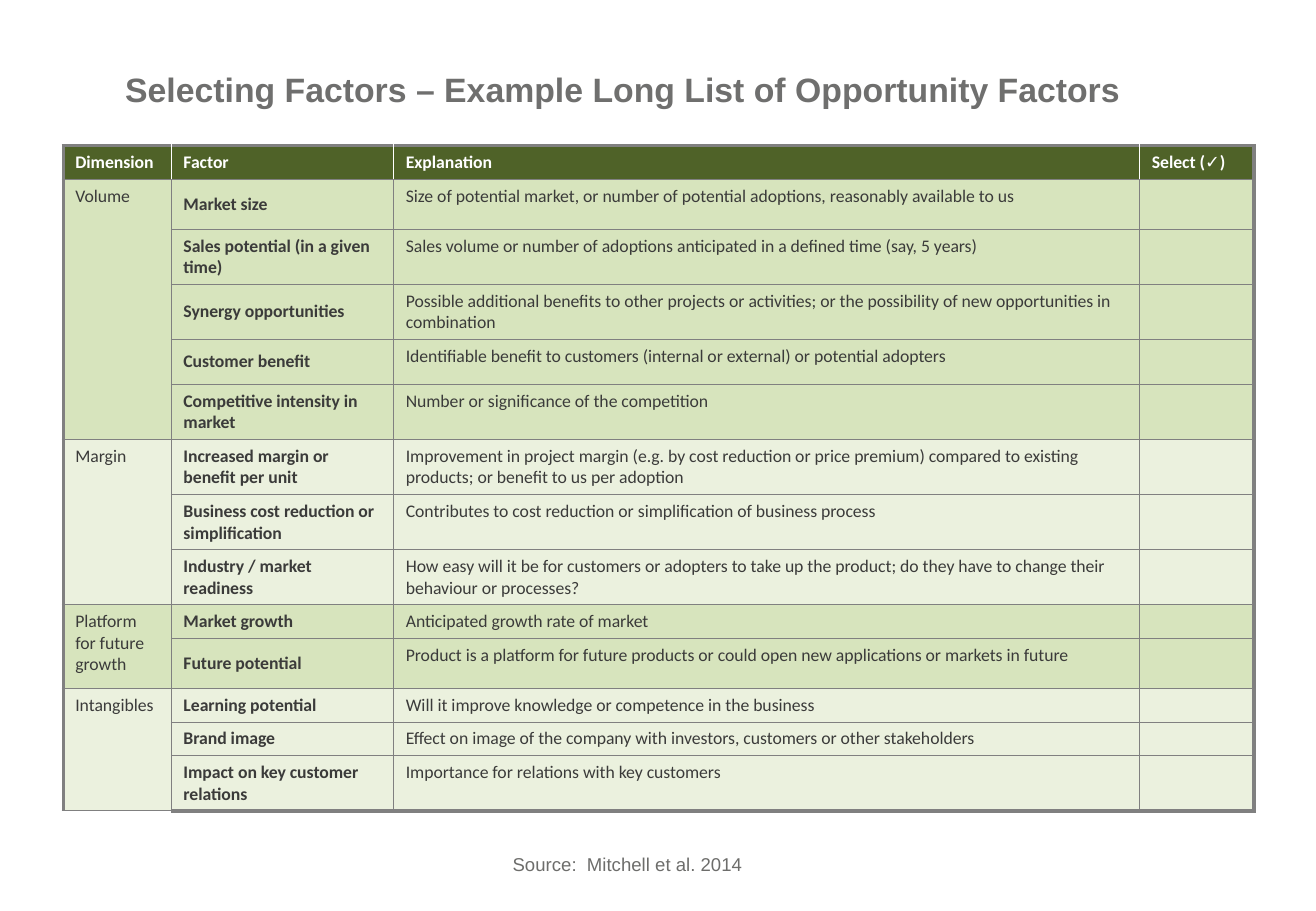
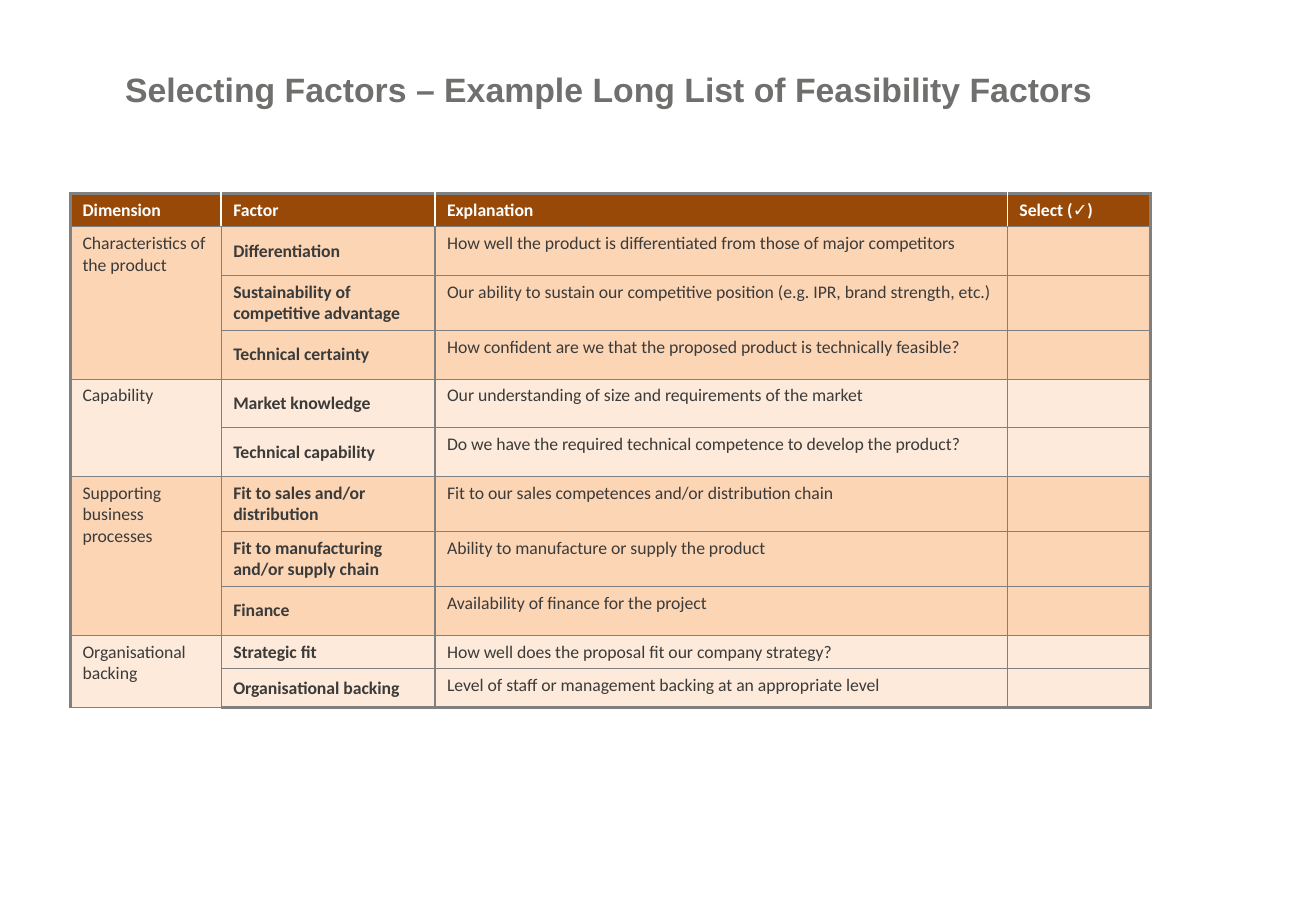
from dataclasses import dataclass

import lxml.etree
import pptx
import pptx.dml.color
import pptx.enum.text
import pptx.oxml.ns
import pptx.util

Inches = pptx.util.Inches
Pt = pptx.util.Pt
qn = pptx.oxml.ns.qn
MIDDLE = pptx.enum.text.MSO_ANCHOR.MIDDLE
TOP = pptx.enum.text.MSO_ANCHOR.TOP


@dataclass(frozen=True)
class Theme:
    title_font: str = "Arial"
    table_font: str = "Calibri"
    title_size: float = 20
    table_size: float = 10.5
    source_size: float = 11
    title_color: str = "6F6F6E"
    source_color: str = "6D6D6B"
    text_color: str = "3B3B3A"
    header_text: str = "FFFFFF"
    grid: str = "808080"
    frame_width: float = 2.25
    grid_width: float = 0.75
    header_width: float = 1


@dataclass(frozen=True)
class Palette:
    header: str
    bands: tuple


THEME = Theme()
GREEN = Palette("4F6228", ("D7E4BD", "EBF1DE"))
ORANGE = Palette("984807", ("FCD5B5", "FDEADA"))

SLIDE_SIZE = (10.83, 7.5)
TITLE_BOX = (0.93, 0.5, 9.17, 0.5)
HEADINGS = ("Dimension", "Factor", "Explanation", "Select (✓)")

OPPORTUNITY = [
    ("Volume", [
        ("Market size", "Size of potential market, or number of potential adoptions, reasonably available to us", 0.41),
        ("Sales potential (in a given time)",
         "Sales volume or number of adoptions anticipated in a defined time (say, 5 years)", 0.37),
        ("Synergy opportunities",
         "Possible additional benefits to other projects or activities; or the possibility of new "
         "opportunities in combination", 0.41),
        ("Customer benefit",
         "Identifiable benefit to customers (internal or external) or potential adopters", 0.37),
        ("Competitive intensity in market", "Number or significance of the competition", 0.25),
    ]),
    ("Margin", [
        ("Increased margin or benefit per unit",
         "Improvement in project margin (e.g. by cost reduction or price premium) compared to existing "
         "products; or benefit to us per adoption", 0.41),
        ("Business cost reduction or simplification",
         "Contributes to cost reduction or simplification of business process", 0.41),
        ("Industry / market readiness",
         "How easy will it be for customers or adopters to take up the product; do they have to change "
         "their behaviour or processes?", 0.41),
    ]),
    ("Platform for future growth", [
        ("Market growth", "Anticipated growth rate of market", 0.25),
        ("Future potential",
         "Product is a platform for future products or could open new applications or markets in future", 0.41),
    ]),
    ("Intangibles", [
        ("Learning potential", "Will it improve knowledge or competence in the business", 0.25),
        ("Brand image", "Effect on image of the company with investors, customers or other stakeholders", 0.25),
        ("Impact on key customer relations", "Importance for relations with key customers", 0.41),
    ]),
]

FEASIBILITY = [
    ("Characteristics of the product", [
        ("Differentiation", "How well the product is differentiated from those of major competitors", 0.4),
        ("Sustainability of competitive advantage",
         "Our ability to sustain our competitive position (e.g. IPR, brand strength, etc.)", 0.4),
        ("Technical certainty", "How confident are we that the proposed product is technically feasible?", 0.4),
    ]),
    ("Capability", [
        ("Market knowledge", "Our understanding of size and requirements of the market", 0.4),
        ("Technical capability", "Do we have the required technical competence to develop the product?", 0.4),
    ]),
    ("Supporting business processes", [
        ("Fit to sales and/or distribution", "Fit to our sales competences and/or distribution chain", 0.24),
        ("Fit to manufacturing and/or supply chain", "Ability to manufacture or supply the product", 0.4),
        ("Finance", "Availability of finance for the project", 0.4),
    ]),
    ("Organisational backing", [
        ("Strategic fit", "How well does the proposal fit our company strategy?", 0.24),
        ("Organisational backing", "Level of staff or management backing at an appropriate level", 0.32),
    ]),
]


def rgb(color):
    return pptx.dml.color.RGBColor.from_string(color)


def set_font(paragraph, name, size, color, bold=False):
    font = paragraph.font
    font.name, font.size, font.bold = name, Pt(size), bold
    font.color.rgb = rgb(color)


def place_title(slide, box, text):
    title = slide.shapes.title
    title.left, title.top, title.width, title.height = map(Inches, box)
    frame = title.text_frame
    frame.text = text
    frame.vertical_anchor = MIDDLE
    frame.auto_size = pptx.enum.text.MSO_AUTO_SIZE.NONE
    heading = frame.paragraphs[0]
    heading.alignment = pptx.enum.text.PP_ALIGN.LEFT
    heading.line_spacing = 0.9
    set_font(heading, THEME.title_font, THEME.title_size, THEME.title_color, True)


def place_source(slide, box, text):
    frame = slide.shapes.add_textbox(*map(Inches, box)).text_frame
    frame.word_wrap = True
    frame.text = text
    set_font(frame.paragraphs[0], THEME.title_font, THEME.source_size, THEME.source_color)


def set_borders(cell, row, column, last_row, last_column):
    frame = (THEME.grid, THEME.frame_width)
    inner = (THEME.grid, THEME.grid_width)
    divider = (THEME.header_text, THEME.header_width) if row == 0 else inner
    edges = {
        "a:lnL": frame if column == 0 else divider,
        "a:lnR": frame if column == last_column else divider,
        "a:lnT": frame if row == 0 else inner,
        "a:lnB": frame if row == last_row else inner,
    }
    properties = cell._tc.get_or_add_tcPr()
    for tag, (color, width) in edges.items():
        line = lxml.etree.SubElement(properties, qn(tag), w=str(Pt(width)))
        fill = lxml.etree.SubElement(line, qn("a:solidFill"))
        lxml.etree.SubElement(fill, qn("a:srgbClr"), val=color)


def fill_cell(cell, text, fill, color, bold, anchor):
    cell.text = text
    cell.vertical_anchor = anchor
    cell.fill.solid()
    cell.fill.fore_color.rgb = rgb(fill)
    set_font(cell.text_frame.paragraphs[0], THEME.table_font, THEME.table_size, color, bold)


def place_factors(slide, left, top, widths, header_height, palette, groups):
    rows = [(HEADINGS, header_height, palette.header)]
    spans = []
    for index, (dimension, factors) in enumerate(groups):
        spans.append((len(rows), len(rows) + len(factors) - 1))
        band = palette.bands[index % len(palette.bands)]
        for position, (factor, explanation, height) in enumerate(factors):
            label = dimension if position == 0 else ""
            rows.append(((label, factor, explanation, ""), height, band))

    total_height = sum(height for _, height, _ in rows)
    table = slide.shapes.add_table(
        len(rows), len(widths), Inches(left), Inches(top), Inches(sum(widths)), Inches(total_height)
    ).table
    table.horz_banding = False
    for column, width in zip(table.columns, widths):
        column.width = Inches(width)

    for r, (texts, height, fill) in enumerate(rows):
        table.rows[r].height = Inches(height)
        header = r == 0
        for c, text in enumerate(texts):
            cell = table.cell(r, c)
            is_factor = c == 1 and not header
            set_borders(cell, r, c, len(rows) - 1, len(widths) - 1)
            fill_cell(cell, text, fill, THEME.header_text if header else THEME.text_color,
                      header or is_factor, MIDDLE if is_factor else TOP)

    for first, last in spans:
        table.cell(first, 0).merge(table.cell(last, 0))


def add_factor_slide(deck, title, *table_parts):
    slide = deck.slides.add_slide(deck.slide_layouts.get_by_name("Title Only"))
    place_title(slide, TITLE_BOX, title)
    place_factors(slide, *table_parts)
    return slide


def main():
    deck = pptx.Presentation()
    deck.slide_width, deck.slide_height = map(Inches, SLIDE_SIZE)
    opportunity = add_factor_slide(
        deck, "Selecting Factors – Example Long List of Opportunity Factors",
        0.52, 1.2, (0.89, 1.83, 6.14, 0.94), 0.25, GREEN, OPPORTUNITY)
    place_source(opportunity, (4.12, 6.97, 2.18, 0.29), "Source:  Mitchell et al. 2014")
    add_factor_slide(
        deck, "Selecting Factors – Example Long List of Feasibility Factors",
        0.58, 1.59, (1.24, 1.76, 4.71, 1.18), 0.24, ORANGE, FEASIBILITY)
    deck.save("out.pptx")


if __name__ == "__main__":
    main()
